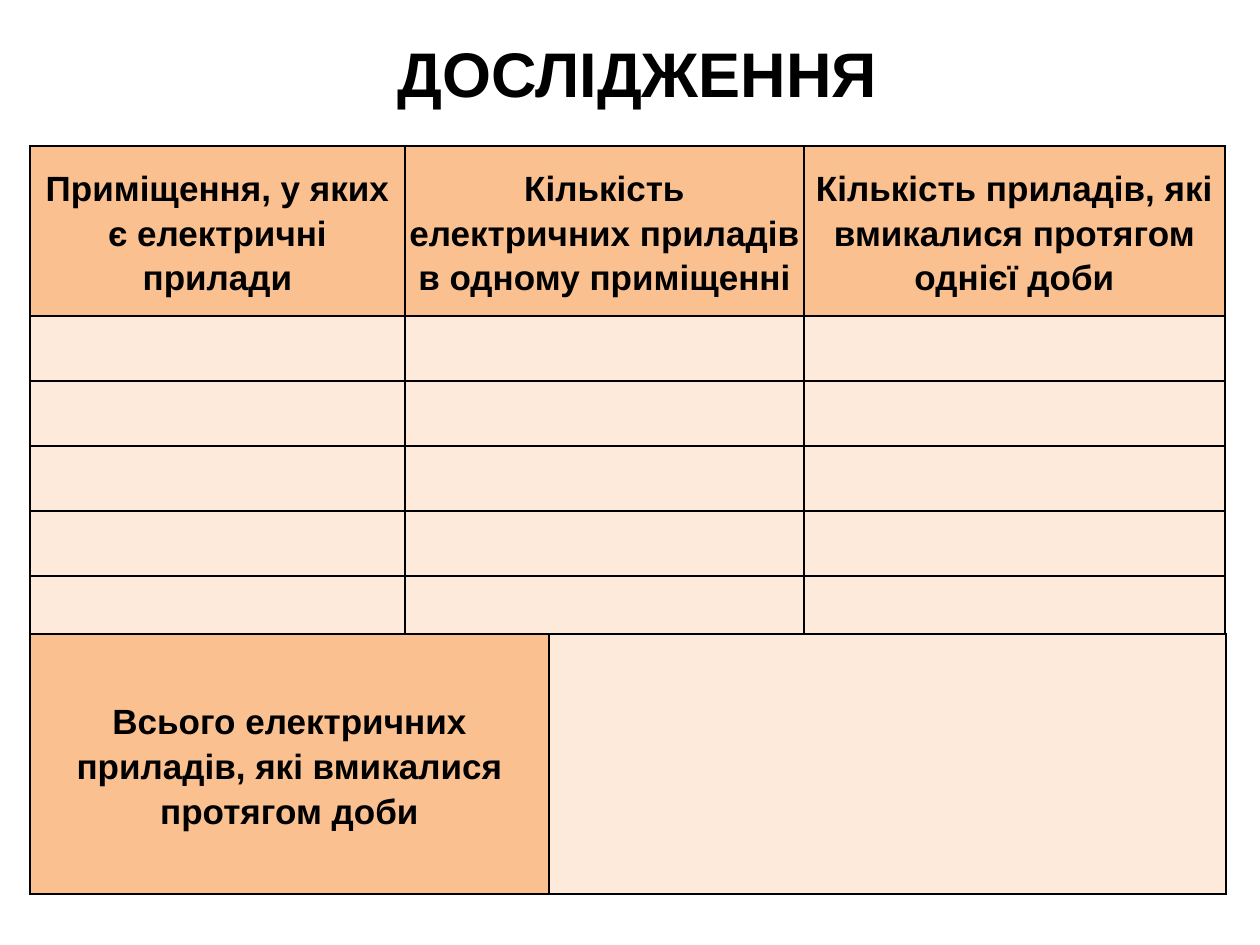
from lxml import etree
from pptx import Presentation
from pptx.dml.color import RGBColor
from pptx.enum.text import MSO_ANCHOR, MSO_AUTO_SIZE, PP_ALIGN
from pptx.oxml.ns import qn
from pptx.util import Emu, Pt

TOP, MIDDLE = MSO_ANCHOR.TOP, MSO_ANCHOR.MIDDLE
CENTER = PP_ALIGN.CENTER
NO_AUTOFIT = MSO_AUTO_SIZE.NONE

BLACK = RGBColor(0x00, 0x00, 0x00)
ORANGE = RGBColor(0xFA, 0xC0, 0x90)
PEACH = RGBColor(0xFD, 0xEA, 0xDA)

FONT = "Arial"
PIXELS_PER_INCH = 126
TABLE_LEFT = 30
HEADERS = [
    "Приміщення, у яких є електричні прилади",
    "Кількість електричних приладів в одному приміщенні",
    "Кількість приладів, які вмикалися протягом однієї доби",
]
TOTAL = "Всього електричних приладів, які вмикалися протягом доби"


def px(length):
    """Turn whole pixels into EMU."""
    return Emu(round(length * 914400 / PIXELS_PER_INCH))


def format_paragraph(paragraph, size):
    """Centre a paragraph and set its bold black font."""
    paragraph.alignment = CENTER
    font = paragraph.font
    font.name, font.size, font.bold = FONT, Pt(size), True
    font.color.rgb = BLACK


def add_title(slide, text, left, top, width, height):
    """Place and format the title placeholder."""
    title = slide.shapes.title
    title.left, title.top, title.width, title.height = map(px, (left, top, width, height))
    frame = title.text_frame
    frame.text = text
    frame.auto_size = NO_AUTOFIT
    frame.vertical_anchor = TOP
    format_paragraph(frame.paragraphs[0], 36)


def add_borders(cell):
    """Draw a thin black line on each side of a cell."""
    properties = cell._tc.get_or_add_tcPr()
    for side in ("a:lnL", "a:lnR", "a:lnT", "a:lnB"):
        line = etree.SubElement(properties, qn(side), w=str(Pt(1)))
        fill = etree.SubElement(line, qn("a:solidFill"))
        etree.SubElement(fill, qn("a:srgbClr"), val=str(BLACK))


def add_grid(slide, top, columns, rows):
    """Add a bordered table with peach cells."""
    frame = slide.shapes.add_table(
        len(rows), len(columns), px(TABLE_LEFT), px(top), px(sum(columns)), px(sum(rows))
    )
    table = frame.table
    table.first_row = table.horz_banding = False
    for column, width in zip(table.columns, columns):
        column.width = px(width)
    for row, height in zip(table.rows, rows):
        row.height = px(height)
    for cell in table.iter_cells():
        add_borders(cell)
        cell.fill.solid()
        cell.fill.fore_color.rgb = PEACH
    return table


def fill_heading(cell, text):
    """Write a heading into an orange cell."""
    cell.fill.fore_color.rgb = ORANGE
    cell.vertical_anchor = MIDDLE
    cell.margin_left = cell.margin_right = px(4)
    cell.margin_top = cell.margin_bottom = 0
    cell.text = text
    paragraph = cell.text_frame.paragraphs[0]
    paragraph.line_spacing = 1.15
    paragraph.space_after = Pt(10)
    format_paragraph(paragraph, 20)


def main():
    """Build the slide and save it."""
    presentation = Presentation()
    presentation.slide_width, presentation.slide_height = px(1260), px(945)
    slide = presentation.slides.add_slide(presentation.slide_layouts[5])

    add_title(slide, "ДОСЛІДЖЕННЯ", 196, 28, 883, 89)

    rooms = add_grid(slide, 146, [375, 399, 421], [170] + [65] * 5)
    for column, text in enumerate(HEADERS):
        fill_heading(rooms.cell(0, column), text)

    total = add_grid(slide, 634, [375, 144, 677], [260])
    total.cell(0, 0).merge(total.cell(0, 1))
    fill_heading(total.cell(0, 0), TOTAL)

    presentation.save("out.pptx")


if __name__ == "__main__":
    main()
